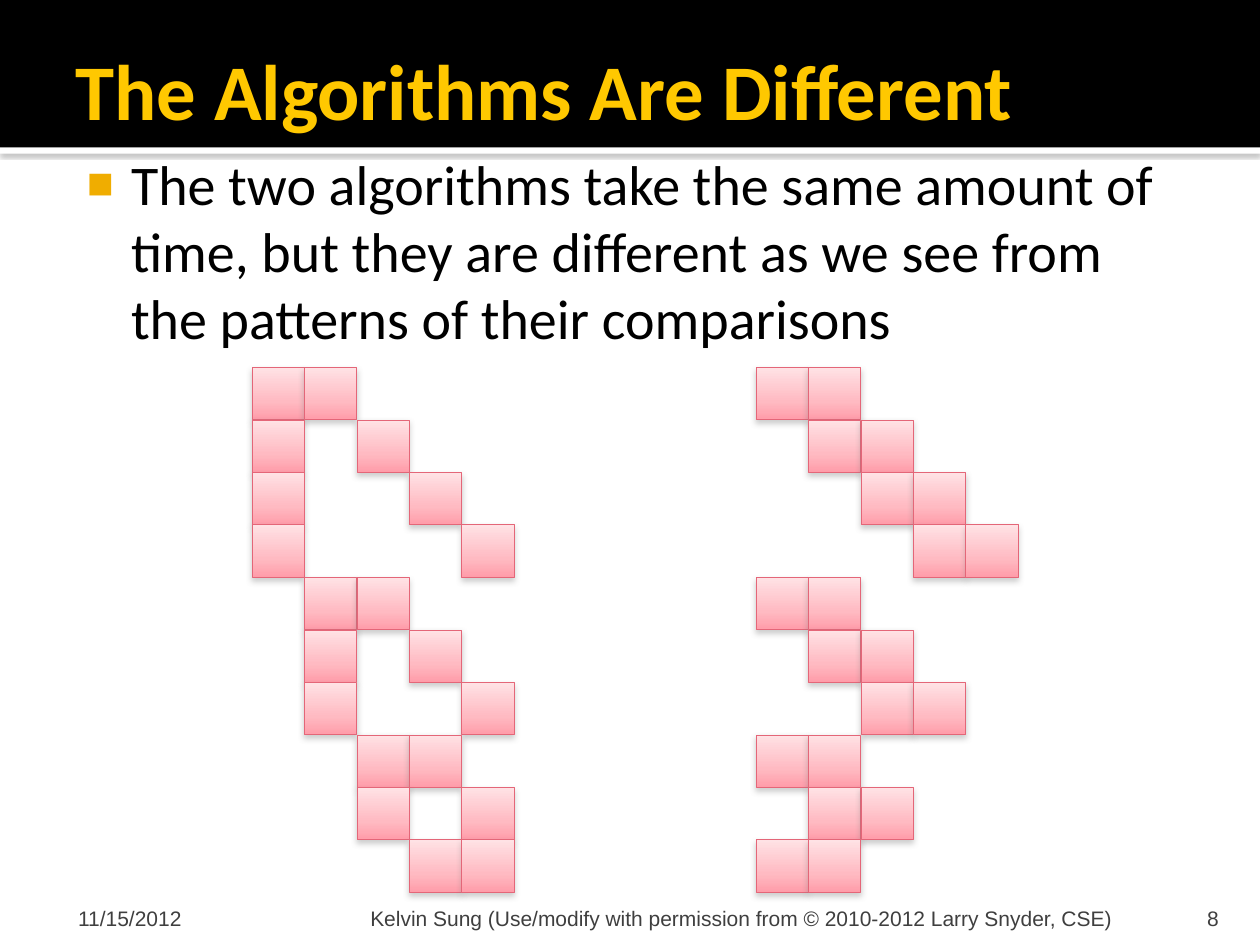
from itertools import combinations

from lxml.etree import SubElement
from pptx import Presentation
from pptx.dml.color import RGBColor
from pptx.enum.shapes import MSO_SHAPE
from pptx.enum.text import MSO_ANCHOR, MSO_AUTO_SIZE, PP_ALIGN
from pptx.oxml import parse_xml
from pptx.oxml.ns import nsdecls, qn
from pptx.util import Pt

WHITE = RGBColor(0xFF, 0xFF, 0xFF)
BLACK = RGBColor(0x00, 0x00, 0x00)
GOLD = RGBColor(0xFF, 0xC8, 0x00)
AMBER = RGBColor(0xF0, 0xAD, 0x00)
GREY = RGBColor(0x3F, 0x3F, 0x3F)
SHADE = RGBColor(0x80, 0x80, 0x80)
ROSE = RGBColor(0xE4, 0x66, 0x78)
PINK_STOPS = (
    (0, RGBColor(0xFF, 0xE2, 0xE5)),
    (65, RGBColor(0xFF, 0xBA, 0xC2)),
    (100, RGBColor(0xFF, 0x9C, 0xA9)),
)

ITEMS = 5
CELL = 30
PATTERN_TOP = 210


def set_all(target, values):
    for name, value in values.items():
        setattr(target, name, value)


def place(element, left, top, width, height):
    set_all(element, {"left": Pt(left), "top": Pt(top),
                      "width": Pt(width), "height": Pt(height)})


def write(holder, wording, anchor, insets, font, align=PP_ALIGN.LEFT):
    sides = ("margin_left", "margin_top", "margin_right", "margin_bottom")
    frame = holder.text_frame
    set_all(frame, {"word_wrap": True, "auto_size": MSO_AUTO_SIZE.NONE,
                    "vertical_anchor": anchor})
    set_all(frame, {side: Pt(inset) for side, inset in zip(sides, insets)})
    paragraph = frame.paragraphs[0]
    set_all(paragraph, {"alignment": align, "space_before": Pt(0)})
    run = paragraph.add_run()
    run.text = wording
    color = font["color"]
    set_all(run.font, {key: value for key, value in font.items() if key != "color"})
    run.font.color.rgb = color
    return paragraph


def add_bullet(paragraph, margin, indent):
    properties = paragraph._p.get_or_add_pPr()
    properties.set("marL", str(Pt(margin)))
    properties.set("indent", str(Pt(indent)))
    color = SubElement(properties, qn("a:buClr"))
    SubElement(color, qn("a:srgbClr"), val=str(AMBER))
    SubElement(properties, qn("a:buSzPct"), val="80000")
    SubElement(properties, qn("a:buFont"), typeface="Arial")
    SubElement(properties, qn("a:buChar"), char="■")


def add_shadow(shape, opacity, blur, distance):
    shape.shadow.inherit = False
    effects = shape._element.spPr.find(qn("a:effectLst"))
    shadow = SubElement(effects, qn("a:outerShdw"), blurRad=str(Pt(blur)),
                        dist=str(Pt(distance)), dir="5400000", rotWithShape="0")
    color = SubElement(shadow, qn("a:srgbClr"), val=str(SHADE))
    SubElement(color, qn("a:alpha"), val=str(opacity * 1000))


def add_band(slide, depth, top, height, color):
    band = slide.shapes.add_shape(MSO_SHAPE.RECTANGLE, 0, Pt(top), Pt(720), Pt(height))
    band.shadow.inherit = False
    band.fill.solid()
    band.fill.fore_color.rgb = color
    band.line.fill.background()
    slide.shapes._spTree.insert(depth, band._element)
    return band


def add_footer(slide, wording, left, width, insets, align=PP_ALIGN.LEFT):
    box = slide.shapes.add_textbox(Pt(left), Pt(510), Pt(width), Pt(21.6))
    font = {"name": "Arial", "size": Pt(12), "color": GREY}
    write(box, wording, MSO_ANCHOR.BOTTOM, insets, font, align)


def add_cell(group, left, top):
    cell = group.shapes.add_shape(MSO_SHAPE.RECTANGLE, Pt(left), Pt(top), Pt(CELL), Pt(CELL))
    stops = "".join(
        f'<a:gs pos="{position * 1000}"><a:srgbClr val="{color}"/></a:gs>'
        for position, color in PINK_STOPS)
    gradient = parse_xml(
        f'<a:gradFill {nsdecls("a")} rotWithShape="1"><a:gsLst>{stops}</a:gsLst>'
        '<a:lin ang="5400000" scaled="0"/></a:gradFill>')
    cell._element.spPr.insert(2, gradient)
    cell.line.color.rgb = ROSE
    cell.line.width = Pt(0.5)
    add_shadow(cell, 38, 3.5, 2)


def add_pattern(slide, left, comparisons):
    group = slide.shapes.add_group_shape()
    for step, compared in enumerate(comparisons):
        for index in compared:
            add_cell(group, left + index * CELL, PATTERN_TOP + step * CELL)


def main():
    deck = Presentation()
    set_all(deck, {"slide_width": Pt(720), "slide_height": Pt(540)})
    slide = deck.slides.add_slide(deck.slide_layouts[1])

    rule = add_band(slide, 2, 84.24, 3.6, WHITE)
    add_shadow(rule, 60, 2.5, 0.8)
    add_band(slide, 3, 0, 84.24, BLACK)

    title, body = slide.placeholders
    place(title, 36, 12, 648, 78)
    write(title, "The Algorithms Are Different", MSO_ANCHOR.MIDDLE, (7.2, 3.6, 3.6, 3.6),
          {"name": "Calibri", "size": Pt(45), "bold": True, "color": GOLD})
    place(body, 36, 78, 648, 408)
    statement = write(
        body,
        "The two algorithms take the same amount of time, but they are different "
        "as we see from the patterns of their comparisons",
        MSO_ANCHOR.TOP, (4.32, 7.2, 7.2, 3.6),
        {"name": "Calibri", "size": Pt(32), "color": BLACK})
    add_bullet(statement, 34.56, -25.2)

    exchange_steps = combinations(range(ITEMS), 2)
    bubble_steps = [(index, index + 1)
                    for last in range(ITEMS - 1, 0, -1) for index in range(last)]
    add_pattern(slide, 144, exchange_steps)
    add_pattern(slide, 432, bubble_steps)

    add_footer(slide, "11/15/2012", 36, 168, (8.64, 3.6, 3.6, 0))
    add_footer(slide,
               "Kelvin Sung (Use/modify with permission from © 2010-2012 Larry Snyder, CSE)",
               208, 433.6, (3.6, 3.6, 3.6, 0))
    add_footer(slide, "8", 646, 57.6, (7.2, 3.6, 7.2, 0), PP_ALIGN.RIGHT)

    deck.save("out.pptx")


if __name__ == "__main__":
    main()
